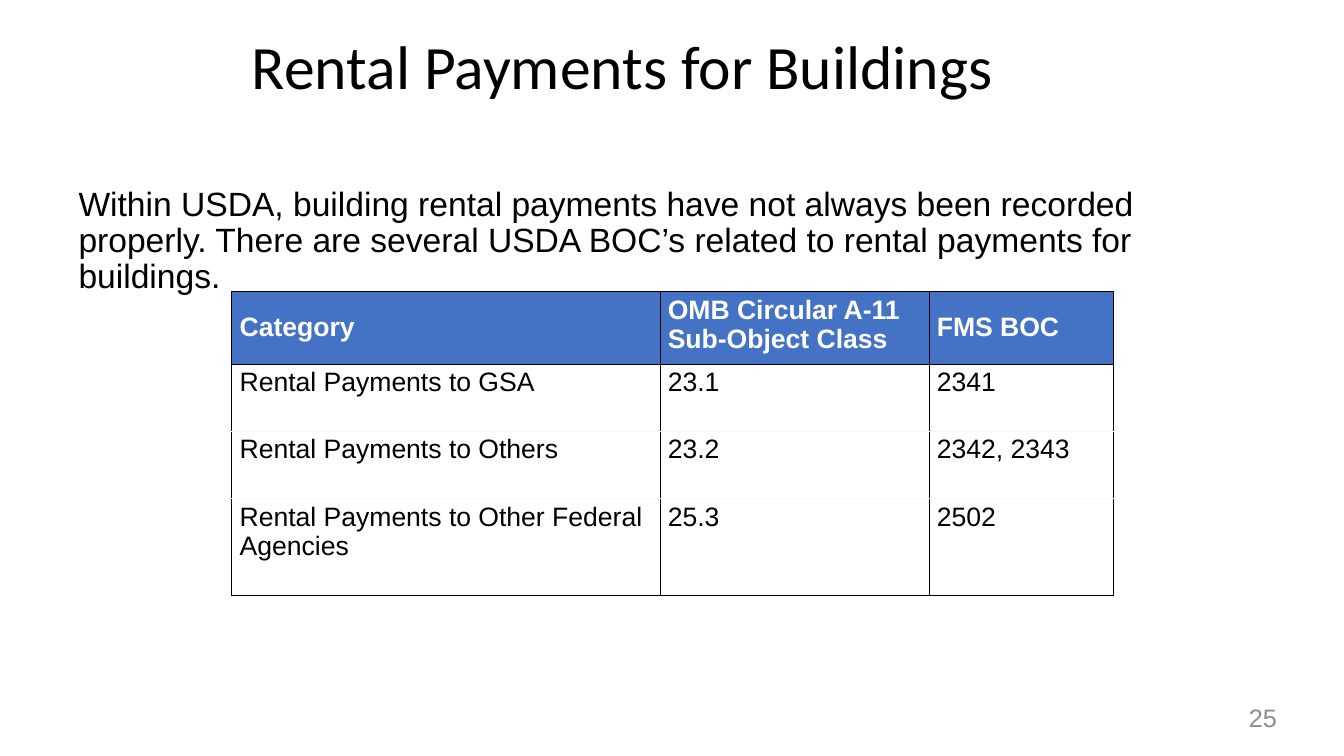
from lxml.etree import SubElement
from pptx import Presentation
from pptx.dml.color import RGBColor
from pptx.enum.text import MSO_ANCHOR, PP_ALIGN
from pptx.oxml.ns import qn
from pptx.util import Cm, Pt

HUES = {"ink": "000000", "head": "4472C4", "white": "FFFFFF",
        "pale": "F4F7FC", "grey": "8C8C8C"}
TITLE = "Rental Payments for Buildings"
BODY = ("Within USDA, building rental payments have not always been recorded "
        "properly. There are several USDA BOC’s related to rental payments "
        "for buildings.")
PAGE = "25"
ROWS = [
    ("Category", "OMB Circular A-11\nSub-Object Class", "FMS BOC"),
    ("Rental Payments to GSA", "23.1", "2341"),
    ("Rental Payments to Others", "23.2", "2342, 2343"),
    ("Rental Payments to Other Federal Agencies", "25.3", "2502"),
]
WIDTHS = (10.79, 6.78, 4.65)
HEIGHTS = (1.83, 1.69, 1.69, 2.44)


def style(frame, size, face, hue, bold=False):
    for para in frame.paragraphs:
        for run in para.runs:
            font = run.font
            font.size, font.name, font.bold = Pt(size), face, bold
            font.color.rgb = RGBColor.from_string(HUES[hue])


def add_text(slide, text, box, size, face, hue):
    frame = slide.shapes.add_textbox(*map(Cm, box)).text_frame
    frame.word_wrap = True
    frame.margin_left = frame.margin_right = 0
    frame.margin_top = frame.margin_bottom = 0
    frame.text = text
    style(frame, size, face, hue)
    return frame.paragraphs[0]


def add_edge(cell, side, hue):
    line = SubElement(cell._tc.get_or_add_tcPr(), qn("a:ln" + side), w=str(Pt(0.6)))
    fill = SubElement(line, qn("a:solidFill"))
    SubElement(fill, qn("a:srgbClr"), val=HUES[hue])


def fill_cell(cell, text, row):
    top = row == 0
    cell.text = text
    style(cell.text_frame, 19, "Arial", "white" if top else "ink", top)
    cell.margin_left = cell.margin_right = Cm(0.2)
    cell.margin_top = cell.margin_bottom = Cm(0.1)
    if top and "\n" not in text:
        cell.vertical_anchor = MSO_ANCHOR.MIDDLE
    over = "pale" if row > 1 else "ink"
    under = "pale" if 0 < row < len(ROWS) - 1 else "ink"
    for side, hue in zip("LRTB", ("ink", "ink", over, under)):
        add_edge(cell, side, hue)
    if top:
        cell.fill.solid()
        cell.fill.fore_color.rgb = RGBColor.from_string(HUES["head"])
    else:
        cell.fill.background()


def add_grid(slide):
    size = (len(ROWS), len(WIDTHS))
    box = (5.84, 7.34, sum(WIDTHS), sum(HEIGHTS))
    table = slide.shapes.add_table(*size, *map(Cm, box)).table
    table.horz_banding = False
    for col, width in zip(table.columns, WIDTHS):
        col.width = Cm(width)
    for row, height in enumerate(HEIGHTS):
        table.rows[row].height = Cm(height)
        for col, text in enumerate(ROWS[row]):
            fill_cell(table.cell(row, col), text, row)


def main():
    """Build the slide on rental payments and save it."""
    deck = Presentation()
    deck.slide_width, deck.slide_height = Cm(33.87), Cm(19.05)
    slide = deck.slides.add_slide(deck.slide_layouts[6])
    add_text(slide, TITLE, (6.35, 0.71, 26.3, 1.9), 44, "Calibri", "ink")
    body = add_text(slide, BODY, (1.98, 4.72, 29.9, 1), 24, "Arial", "ink")
    body.line_spacing = 0.9
    add_grid(slide)
    page = add_text(slide, PAGE, (24.38, 17.7, 7.8, 0.76), 18, "Arial", "grey")
    page.alignment = PP_ALIGN.RIGHT
    deck.save("out.pptx")


if __name__ == "__main__":
    main()
